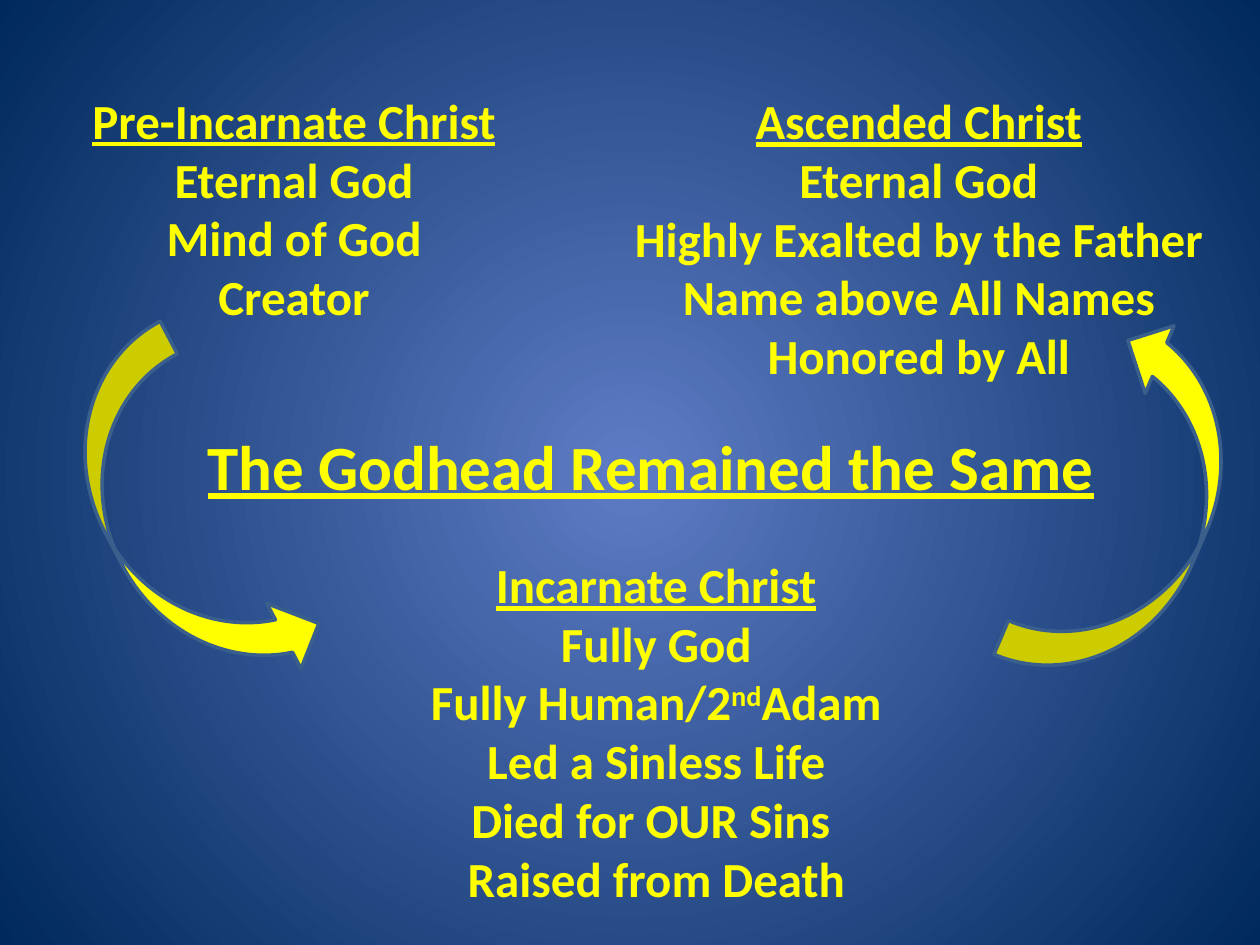
from lxml.etree import SubElement
from pptx import Presentation
from pptx.dml.color import RGBColor
from pptx.enum.shapes import MSO_SHAPE as Shape
from pptx.enum.text import MSO_AUTO_SIZE as AutoSize, PP_ALIGN as Align
from pptx.oxml.ns import qn
from pptx.util import Pt

COLORS = {"text": "FFFF00", "arrow": "FFFF00", "arrow_line": "3A5F8C",
          "center": "5E7CC5", "edge": "00295C"}
FONT = "Calibri"

# Each block: left, top, width, height, text size, lines (the first is the heading).
# A line given as a tuple is (before, superscript, after).
BLOCKS = [
    (36, 48, 264, 143.3, 28,
     ["Pre-Incarnate Christ", "Eternal God", "Mind of God", "Creator"]),
    (234, 313.2, 282, 232.6, 28,
     ["Incarnate Christ", "Fully God", ("Fully Human/2", "nd", "Adam"),
      "Led a Sinless Life", "Died for OUR Sins ", "Raised from Death"]),
    (354, 48.2, 342, 232.6, 28,
     ["Ascended Christ", "Eternal God", "Highly Exalted by the Father",
      "Name above All Names", "Honored by All"]),
    (84, 240.5, 576, 51, 36, ["The Godhead Remained the Same"]),
]

# Each arrow: left, top, rotation
ARROWS = [(62.6, 190.8, 332.3), (607, 183, 203.1)]
ARROW_SIZE = (84, 216)


def color(name):
    return RGBColor.from_string(COLORS[name])


def paint_background(slide):
    fill = slide.background.fill
    fill.gradient()
    for stop, name in zip(fill.gradient_stops, ("center", "edge")):
        stop.color.rgb = color(name)
    # Turn the linear gradient into a circular one
    gradient = slide.background._cSld.find(".//" + qn("a:gradFill"))
    gradient.remove(gradient.find(qn("a:lin")))
    circle = SubElement(gradient, qn("a:path"), path="circle")
    SubElement(circle, qn("a:fillToRect"), l="50000", t="50000", r="50000", b="50000")


def add_block(slide, left, top, width, height, size, lines):
    box = slide.shapes.add_textbox(Pt(left), Pt(top), Pt(width), Pt(height))
    frame = box.text_frame
    frame.word_wrap = True
    frame.auto_size = AutoSize.SHAPE_TO_FIT_TEXT
    for index, line in enumerate(lines):
        paragraph = frame.add_paragraph() if index else frame.paragraphs[0]
        paragraph.alignment = Align.CENTER
        for position, part in enumerate((line,) if isinstance(line, str) else line):
            run = paragraph.add_run()
            run.text = part
            font = run.font
            font.name, font.size, font.bold = FONT, Pt(size), True
            font.underline = index == 0
            font.color.rgb = color("text")
            if position == 1:
                run._r.get_or_add_rPr().set("baseline", "30000")


def add_arrow(slide, left, top, rotation):
    width, height = ARROW_SIZE
    arrow = slide.shapes.add_shape(Shape.CURVED_RIGHT_ARROW,
                                   Pt(left), Pt(top), Pt(width), Pt(height))
    arrow.rotation = rotation
    arrow.shadow.inherit = False
    arrow.fill.solid()
    arrow.fill.fore_color.rgb = color("arrow")
    arrow.line.color.rgb = color("arrow_line")
    arrow.line.width = Pt(2)


def main():
    presentation = Presentation()
    presentation.slide_width, presentation.slide_height = Pt(720), Pt(540)
    slide = presentation.slides.add_slide(presentation.slide_layouts[6])
    paint_background(slide)

    # The three states of Christ, the arrows between them, then the central title
    *states, title = BLOCKS
    for state in states:
        add_block(slide, *state)
    for arrow in ARROWS:
        add_arrow(slide, *arrow)
    add_block(slide, *title)
    presentation.save("out.pptx")


if __name__ == "__main__":
    main()
